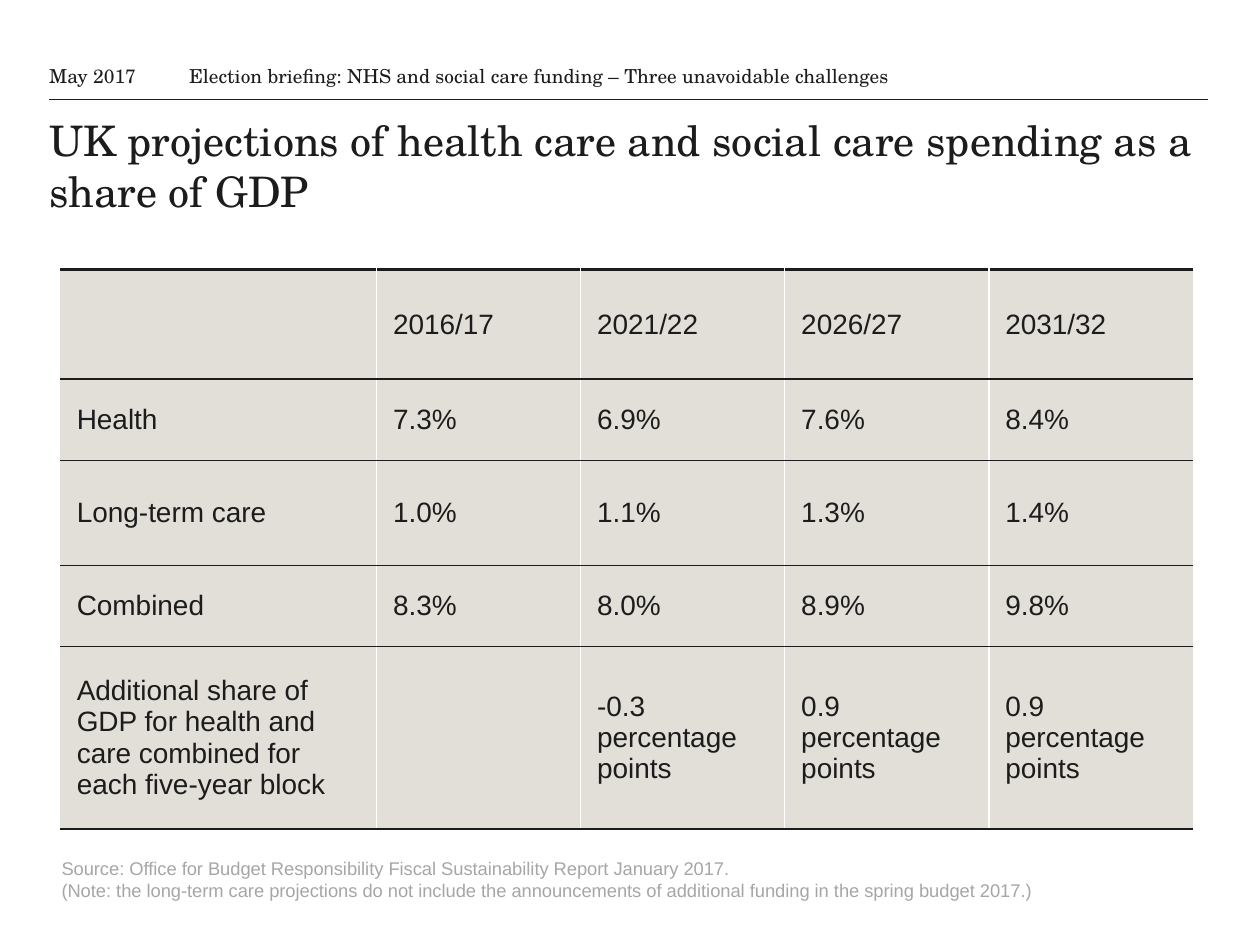
from dataclasses import dataclass
from typing import Optional

from lxml.etree import SubElement
from pptx import Presentation
from pptx.dml.color import RGBColor
from pptx.enum.shapes import MSO_CONNECTOR
from pptx.enum.text import MSO_ANCHOR
from pptx.oxml.ns import qn
from pptx.util import Inches, Pt

INK, WHITE, PANEL, GREY = "1C1C1C", "FFFFFF", "E2DFD8", "A6A6A6"
SERIF, SANS = "TeX Gyre Schola", "Arial"


@dataclass
class Label:
    """A text box with its place and format."""
    text: str
    left: float
    top: float
    width: float
    height: float
    size: float
    font: str = SERIF
    color: str = INK
    anchor: MSO_ANCHOR = MSO_ANCHOR.TOP
    inset: tuple[float, float] = (0, 0)


LABELS = [
    Label("UK projections of health care and social care spending as a share of GDP",
          0.39, 0.91, 9.19, 0.81, 24),
    Label("May 2017", 0.39, 0.39, 1.02, 0.3, 11, anchor=MSO_ANCHOR.BOTTOM),
    Label("Election briefing: NHS and social care funding – Three unavoidable challenges",
          1.5, 0.39, 6.79, 0.3, 11, anchor=MSO_ANCHOR.BOTTOM),
    Label("Source: Office for Budget Responsibility Fiscal Sustainability Report January 2017.\n"
          "(Note: the long-term care projections do not include the announcements of "
          "additional funding in the spring budget 2017.)",
          0.39, 6.75, 9.1, 0.45, 10.5, SANS, GREY, inset=(0.1, 0.05)),
]

COL_WIDTHS = [2.51] + [1.62] * 4
ROW_HEIGHTS = [0.87, 0.62, 0.83, 0.62, 1.44]
ROWS = [
    ["", "2016/17", "2021/22", "2026/27", "2031/32"],
    ["Health", "7.3%", "6.9%", "7.6%", "8.4%"],
    ["Long-term care", "1.0%", "1.1%", "1.3%", "1.4%"],
    ["Combined", "8.3%", "8.0%", "8.9%", "9.8%"],
    ["Additional share of GDP for health and care combined for each five-year block", "",
     "-0.3 percentage points", "0.9 percentage points", "0.9 percentage points"],
]


def rgb(color: str) -> RGBColor:
    return RGBColor.from_string(color)


def write(tf, text: str, *, size: float, font: str, color: str) -> None:
    p = tf.paragraphs[0]
    p.font.size, p.font.name = Pt(size), font
    for i, line in enumerate(text.split("\n") if text else []):
        if i:
            p.add_line_break()
        r = p.add_run()
        r.text = line
        r.font.size, r.font.name = Pt(size), font
        r.font.color.rgb = rgb(color)


def set_margins(box, x: float, y: float) -> None:
    box.margin_left = box.margin_right = Inches(x)
    box.margin_top = box.margin_bottom = Inches(y)


def add_label(s, label: Label) -> None:
    sp = s.shapes.add_textbox(*map(Inches, (label.left, label.top, label.width, label.height)))
    tf = sp.text_frame
    tf.word_wrap = True
    tf.vertical_anchor = label.anchor
    set_margins(tf, *label.inset)
    write(tf, label.text, size=label.size, font=label.font, color=label.color)


def add_rule(s, x1: float, x2: float, y: float) -> None:
    line = s.shapes.add_connector(MSO_CONNECTOR.STRAIGHT, *map(Inches, (x1, y, x2, y)))
    line.line.color.rgb, line.line.width = rgb(INK), Pt(0.5)
    SubElement(line._element.spPr, qn("a:effectLst"))


def add_border(cell, side: str, color: Optional[str], width: float) -> None:
    ln = SubElement(cell._tc.get_or_add_tcPr(), qn(f"a:ln{side}"), w=str(Pt(width)))
    if color is None:
        SubElement(ln, qn("a:noFill"))
    else:
        SubElement(SubElement(ln, qn("a:solidFill")), qn("a:srgbClr"), val=color)


def add_spending_table(s, left: float, top: float) -> None:
    last = len(COL_WIDTHS) - 1
    frame = s.shapes.add_table(len(ROWS), len(COL_WIDTHS), Inches(left), Inches(top),
                               Inches(sum(COL_WIDTHS)), Inches(sum(ROW_HEIGHTS)))
    table = frame.table
    table.first_row = table.horz_banding = False
    for col, width in zip(table.columns, COL_WIDTHS):
        col.width = Inches(width)
    for i, (row, height) in enumerate(zip(table.rows, ROW_HEIGHTS)):
        row.height = Inches(height)
        for j, cell in enumerate(row.cells):
            cell.vertical_anchor = MSO_ANCHOR.MIDDLE
            set_margins(cell, 0.13, 0.19)
            add_border(cell, "L", WHITE if j else None, 0.75)
            add_border(cell, "R", WHITE if j < last else None, 0.75)
            add_border(cell, "T", INK, 1 if i else 2.25)
            add_border(cell, "B", INK, 1)
            cell.fill.solid()
            cell.fill.fore_color.rgb = rgb(PANEL)
            write(cell.text_frame, ROWS[i][j], size=16, font=SANS, color=INK)


def main() -> None:
    """Build the slide on health and social care spending."""
    prs = Presentation()
    prs.slide_width, prs.slide_height = Inches(10), Inches(7.5)
    s = prs.slides.add_slide(prs.slide_layouts[6])
    add_rule(s, 0.39, 9.59, 0.79)
    for label in LABELS:
        add_label(s, label)
    add_spending_table(s, 0.48, 2.14)
    prs.save("out.pptx")


if __name__ == "__main__":
    main()
